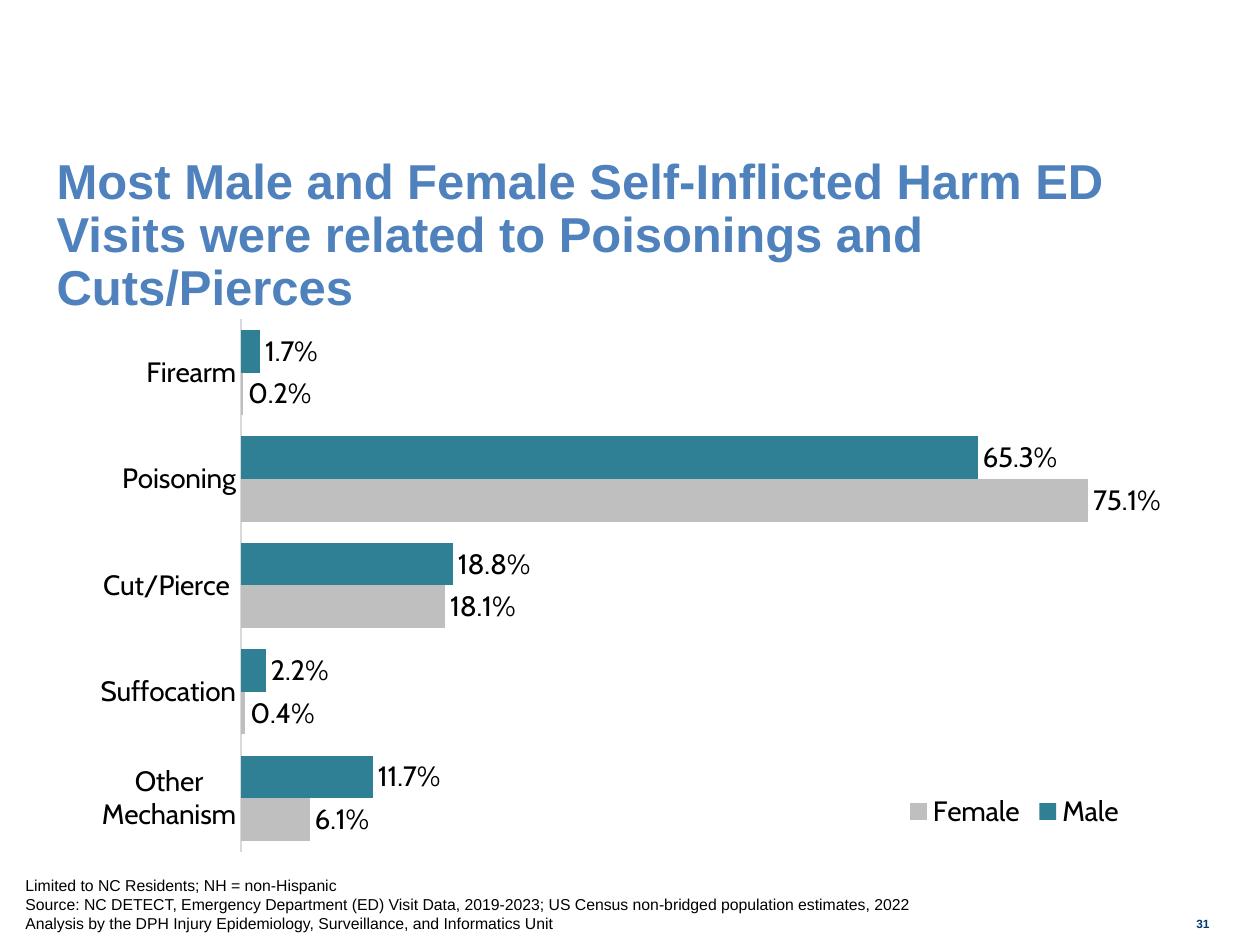
from lxml import etree
from pptx import Presentation
from pptx.chart.data import CategoryChartData
from pptx.dml.color import RGBColor
from pptx.enum.chart import (XL_CHART_TYPE, XL_LABEL_POSITION,
                             XL_LEGEND_POSITION, XL_TICK_LABEL_POSITION,
                             XL_TICK_MARK)
from pptx.enum.text import MSO_ANCHOR, MSO_AUTO_SIZE, PP_ALIGN
from pptx.oxml.ns import qn
from pptx.util import Emu, Pt

BAR = XL_CHART_TYPE.BAR_CLUSTERED
OUT_END = XL_LABEL_POSITION.OUTSIDE_END
BOTTOM = XL_LEGEND_POSITION.BOTTOM
NO_TEXT = XL_TICK_LABEL_POSITION.NONE
NO_TICK = XL_TICK_MARK.NONE
TOP = MSO_ANCHOR.TOP
NO_FIT = MSO_AUTO_SIZE.NONE
LEFT, RIGHT = PP_ALIGN.LEFT, PP_ALIGN.RIGHT

BLUE = RGBColor(0x4F, 0x81, 0xBD)
NAVY = RGBColor(0x00, 0x3B, 0x70)
TEAL = RGBColor(0x2F, 0x7F, 0x95)
GRAY = RGBColor(0xBF, 0xBF, 0xBF)
RULE = RGBColor(0xD9, 0xD9, 0xD9)
BLACK = RGBColor(0, 0, 0)

TITLE = ("Most Male and Female Self-Inflicted Harm ED Visits were related "
         "to Poisonings and Cuts/Pierces")
NOTES = ["Limited to NC Residents; NH = non-Hispanic",
         "Source: NC DETECT, Emergency Department (ED) Visit Data, 2019-2023; "
         "US Census non-bridged population estimates, 2022"]
CREDIT = ["Analysis by the DPH Injury Epidemiology, Surveillance, "
          "and Informatics Unit"]
CAUSES = ["Firearm", "Poisoning", "Cut/Pierce ", "Suffocation",
          "Other Mechanism"]
SERIES = [("Male", (0.017, 0.653, 0.188, 0.022, 0.117), TEAL),
          ("Female", (0.002, 0.751, 0.181, 0.004, 0.061), GRAY)]


def px(n):
    """Turn pixels into EMU."""
    return Emu(round(n * 914400 / 126))


def style(font, size, color=BLACK, face="Arial", bold=False):
    """Format one font."""
    font.size, font.name, font.bold = Pt(size), face, bold
    font.color.rgb = color


def write(frame, lines, align=LEFT, space=None, **look):
    """Fill a text frame with formatted lines."""
    frame.word_wrap = True
    frame.auto_size = NO_FIT
    frame.vertical_anchor = TOP
    for i, line in enumerate(lines):
        para = frame.add_paragraph() if i else frame.paragraphs[0]
        para.alignment = align
        para.line_spacing = space
        run = para.add_run()
        run.text = line
        style(run.font, **look)


def add_text(slide, box, lines, **look):
    """Place a text box."""
    shape = slide.shapes.add_textbox(*map(px, box))
    write(shape.text_frame, lines, **look)


def add_title(slide, box):
    """Place the title."""
    title = slide.shapes.title
    title.left, title.top, title.width, title.height = map(px, box)
    write(title.text_frame, [TITLE], space=0.9, size=28, color=BLUE, bold=True)


def set_layout(part, box, inner=False):
    """Fix a chart part at fractions of the chart area."""
    for old in part.findall(qn("c:layout")):
        part.remove(old)
    layout = etree.Element(qn("c:layout"))
    manual = etree.SubElement(layout, qn("c:manualLayout"))
    pairs = [("layoutTarget", "inner")] if inner else []
    pairs += [("xMode", "edge"), ("yMode", "edge"), *zip("xywh", box)]
    for tag, val in pairs:
        etree.SubElement(manual, qn("c:" + tag)).set("val", str(val))
    part.insert(0 if inner else 1, layout)


def add_bars(slide, box):
    """Place the bar chart."""
    data = CategoryChartData(number_format="0.0%")
    data.categories = CAUSES
    for name, vals, _ in SERIES:
        data.add_series(name, vals)
    chart = slide.shapes.add_chart(BAR, *map(px, box), data).chart
    style(chart.font, 10)
    chart.has_title = False

    plot = chart.plots[0]
    plot.gap_width, plot.overlap = 50, 0
    plot.vary_by_categories = False
    for bars, (_, _, color) in zip(plot.series, SERIES):
        bars.format.fill.solid()
        bars.format.fill.fore_color.rgb = color
        labels = bars.data_labels
        labels.show_value = True
        labels.position = OUT_END
        labels.number_format = "0.0%"
        labels.number_format_is_linked = False
        style(labels.font, 16, face="Cabin")

    cats, vals = chart.category_axis, chart.value_axis
    cats.reverse_order = True
    cats.major_tick_mark = cats.minor_tick_mark = NO_TICK
    cats.format.line.color.rgb = RULE
    cats.format.line.width = Pt(0.75)
    style(cats.tick_labels.font, 16, face="Cabin")
    vals.minimum_scale, vals.maximum_scale = 0, 0.8
    vals.has_major_gridlines = False
    vals.tick_label_position = NO_TEXT
    vals.visible = False

    chart.has_legend = True
    legend = chart.legend
    legend.position = BOTTOM
    legend.include_in_layout = False
    style(legend.font, 16, face="Cabin")
    area = chart.element.chart.plotArea
    set_layout(area, (0.148, 0.035, 0.825, 0.952), inner=True)
    set_layout(chart.element.chart.find(qn("c:legend")),
               (0.75, 0.88, 0.21, 0.07))


def main():
    """Build the slide."""
    deck = Presentation()
    deck.slide_width, deck.slide_height = px(1260), px(945)
    slide = deck.slides.add_slide(deck.slide_layouts[5])
    add_title(slide, (44, 151, 1130, 166))
    add_bars(slide, (79, 300, 1094, 559))
    add_text(slide, (13, 870, 1188, 50), NOTES, size=9)
    add_text(slide, (13, 908, 1188, 31), CREDIT, size=9)
    add_text(slide, (1144, 910, 78, 39), ["31"], align=RIGHT, size=6.8,
             color=NAVY, bold=True)
    deck.save("out.pptx")


if __name__ == "__main__":
    main()
